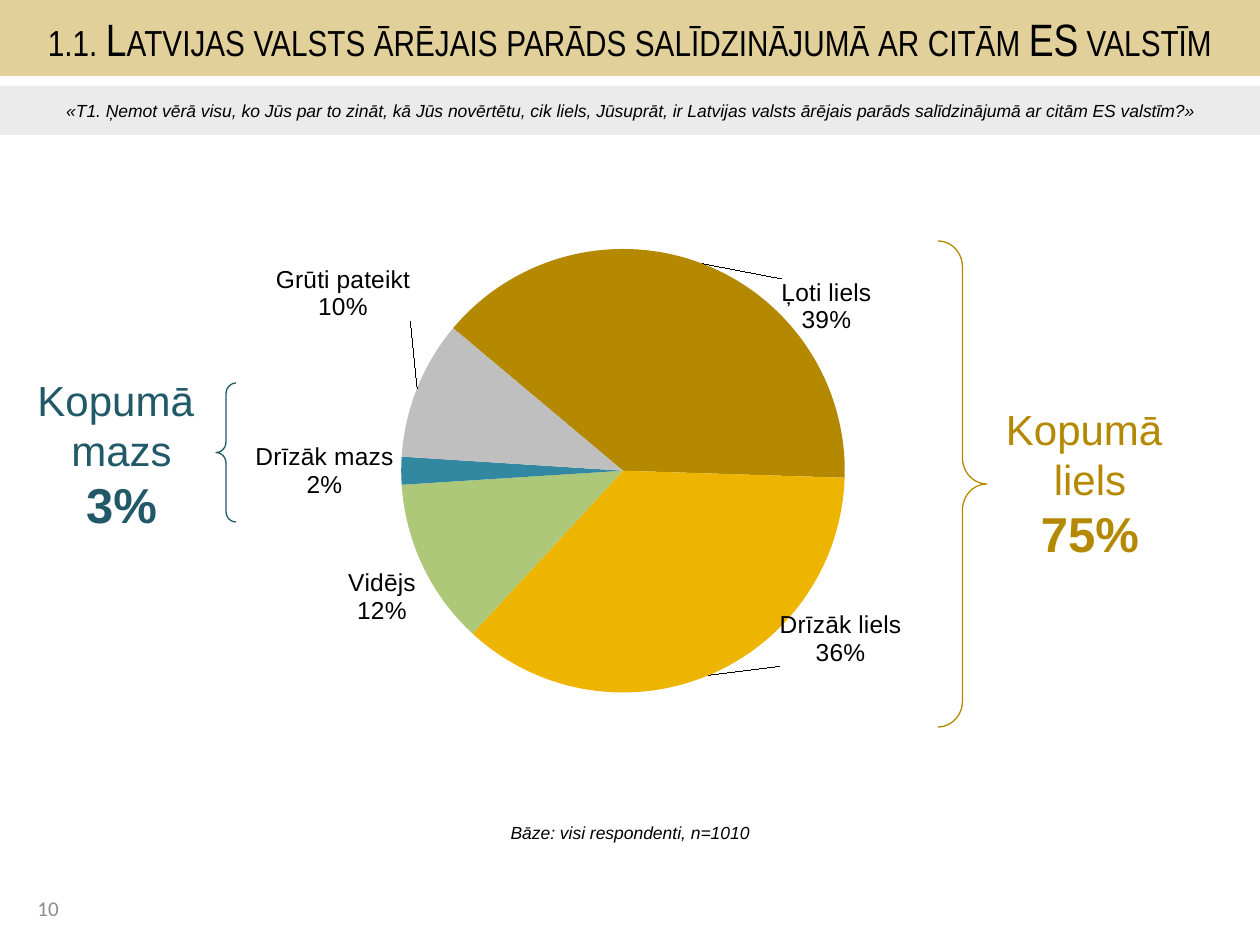
from dataclasses import dataclass

from lxml import etree
from pptx import Presentation
from pptx import util as u
from pptx.chart.data import CategoryChartData
from pptx.dml.color import RGBColor
from pptx.enum import chart as charts, shapes, text
from pptx.oxml import parse_xml
from pptx.oxml.ns import nsdecls, qn

PX = 914400 / 126  # EMU in one px


@dataclass(frozen=True)
class Theme:
    sans: str = "Arial"
    narrow: str = "Arial Narrow"
    number_font: str = "Calibri"
    black: str = "000000"
    grey: str = "8C8C8C"
    title_band: str = "E1D099"
    question_band: str = "D9D9D9"
    large: str = "B48900"
    small: str = "215968"
    slices: tuple = ("B48900", "EEB500", "AEC87A", "3288A0", "12313A", "BFBFBF")
    title_size: float = 25.9
    note_size: int = 10
    number_size: int = 12
    label_size: int = 14
    total_size: int = 24
    percent_size: int = 28
    line_width: float = 0.75


def emu(*lengths):
    return [u.Emu(round(length * PX)) for length in lengths]


def manual_layout(**values):
    """A chart layout element with the given children, in order."""
    children = "".join(f'<c:{name} val="{value}"/>' for name, value in values.items())
    return parse_xml(f'<c:layout {nsdecls("c")}><c:manualLayout>{children}'
                     f'</c:manualLayout></c:layout>')


class SlideBuilder:
    def __init__(self, presentation, theme):
        self.theme = theme
        self.slide = presentation.slides.add_slide(presentation.slide_layouts[6])

    def style(self, font, size, color, name=None, bold=None, italic=None):
        font.name = name or self.theme.sans
        font.size = u.Pt(size)
        font.color.rgb = RGBColor.from_string(color)
        font.bold, font.italic = bold, italic

    def add_lines(self, shape, lines, align=text.PP_ALIGN.CENTER,
                  anchor=text.MSO_ANCHOR.MIDDLE, small_caps=False):
        """Each line is its wording and a dict of style() arguments."""
        frame = shape.text_frame
        frame.word_wrap = True
        frame.vertical_anchor = anchor
        for index, (wording, look) in enumerate(lines):
            paragraph = frame.add_paragraph() if index else frame.paragraphs[0]
            paragraph.alignment = align
            run = paragraph.add_run()
            run.text = wording
            self.style(run.font, **look)
            if small_caps:
                run.font._element.set("cap", "small")

    def text_box(self, box, lines, **options):
        self.add_lines(self.slide.shapes.add_textbox(*emu(*box)), lines, **options)

    def band(self, box, color, lines, alpha=None, **options):
        shape = self.slide.shapes.add_shape(shapes.MSO_SHAPE.RECTANGLE, *emu(*box))
        shape.shadow.inherit = False
        shape.fill.solid()
        shape.fill.fore_color.rgb = RGBColor.from_string(color)
        shape.line.fill.background()
        if alpha is not None:
            fill_color = shape._element.spPr.find(".//" + qn("a:srgbClr"))
            etree.SubElement(fill_color, qn("a:alpha"), val=str(alpha * 1000))
        self.add_lines(shape, lines, **options)

    def brace(self, box, color, rotation=0):
        shape = self.slide.shapes.add_shape(shapes.MSO_SHAPE.RIGHT_BRACE, *emu(*box))
        shape.shadow.inherit = False
        shape.fill.background()
        shape.line.color.rgb = RGBColor.from_string(color)
        shape.line.width = u.Pt(self.theme.line_width)
        shape.adjustments[0] = 0.53
        shape.rotation = rotation

    def total(self, box, color, words, percent):
        lines = [(word, dict(size=self.theme.total_size, color=color)) for word in words]
        lines.append((percent, dict(size=self.theme.percent_size, color=color, bold=True)))
        self.text_box(box, lines, anchor=text.MSO_ANCHOR.TOP)

    def pie(self, box, values, start_angle, plot_area, label_shifts):
        data = CategoryChartData(number_format="0")
        data.categories = list(values)
        data.add_series("Series 1", list(values.values()))
        chart = self.slide.shapes.add_chart(
            charts.XL_CHART_TYPE.PIE, *emu(*box), data).chart
        chart.has_title = chart.has_legend = False
        self.style(chart.font, self.theme.note_size, self.theme.black)
        plot = chart.plots[0]
        plot.vary_by_categories = True
        series = plot.series[0]
        for index, color in enumerate(self.theme.slices):
            fill = series.points[index].format.fill
            fill.solid()
            fill.fore_color.rgb = RGBColor.from_string(color)

        # Category and percentage labels
        outside = charts.XL_LABEL_POSITION.OUTSIDE_END
        labels = series.data_labels
        labels.show_category_name = labels.show_percentage = True
        labels.show_value = False
        labels.number_format, labels.number_format_is_linked = "0%", False
        labels.position = outside
        self.style(labels.font, self.theme.label_size, self.theme.black)
        for index in label_shifts:
            label = series.points[index].data_label
            self.style(label.font, self.theme.label_size, self.theme.black)
            label.position = outside
        for label in labels._element.findall(qn("c:dLbl")):
            index = label.find(qn("c:idx"))
            x, y = label_shifts[int(index.get("val"))]
            index.addnext(manual_layout(x=x, y=y))
            for flag, state in (("Val", "0"), ("CatName", "1"), ("Percent", "1")):
                label.find(qn("c:show" + flag)).set("val", state)
        for flag in list(labels._element.iter(qn("c:showBubbleSize"))):
            flag.addnext(parse_xml(f'<c:separator {nsdecls("c")}>\n</c:separator>'))

        # First slice angle and inner plot area
        pie = plot._element
        for old in pie.findall(qn("c:firstSliceAng")):
            pie.remove(old)
        etree.SubElement(pie, qn("c:firstSliceAng"), val=str(start_angle))
        area = pie.getparent()
        for old in area.findall(qn("c:layout")):
            area.remove(old)
        x, y, w, h = plot_area
        area.insert(0, manual_layout(layoutTarget="inner", xMode="edge", yMode="edge",
                                     x=x, y=y, w=w, h=h))


def main():
    theme = Theme()
    presentation = Presentation()
    presentation.slide_width, presentation.slide_height = emu(1260, 945)
    builder = SlideBuilder(presentation, theme)
    note = dict(size=theme.note_size, color=theme.black, italic=True)

    # Slide number
    builder.text_box((25, 886, 134, 45), [
        ("10", dict(size=theme.number_size, color=theme.grey, name=theme.number_font)),
    ], align=text.PP_ALIGN.LEFT)

    # Pie of answers
    answers = {"Ļoti liels": 39, "Drīzāk liels": 36, "Vidējs": 12,
               "Drīzāk mazs": 2, "Ļoti mazs": 0, "Grūti pateikt": 10}
    builder.pie((188, 158, 853, 645), answers, start_angle=310,
                plot_area=(0.25, 0.14, 0.52, 0.69),
                label_shifts={0: (0.09, 0.12), 1: (0.08, -0.11),
                              4: (-0.01, -0.05), 5: (0, -0.1)})

    # Base note
    builder.text_box((0, 803, 1260, 59), [("Bāze: visi respondenti, n=1010", note)])

    # Title and question bands
    builder.band((0, 0, 1260, 76), theme.title_band, [
        ("1.1. Latvijas valsts ārējais parāds salīdzinājumā ar citām ES valstīm",
         dict(size=theme.title_size, color=theme.black, name=theme.narrow)),
    ], small_caps=True)
    builder.band((0, 86, 1260, 49), theme.question_band, [
        ("«T1. Ņemot vērā visu, ko Jūs par to zināt, kā Jūs novērtētu, cik liels, "
         "Jūsuprāt, ir Latvijas valsts ārējais parāds salīdzinājumā ar citām ES valstīm?»",
         note),
    ], alpha=50)

    # Totals with their braces
    builder.brace((938, 241, 49, 486), theme.large)
    builder.total((944, 397, 292, 174), theme.large, ("Kopumā ", "liels"), "75%")
    builder.brace((216, 383, 20, 139), theme.small, rotation=180)
    builder.total((24, 368, 195, 174), theme.small, ("Kopumā ", "mazs"), "3%")

    presentation.save("out.pptx")


if __name__ == "__main__":
    main()
